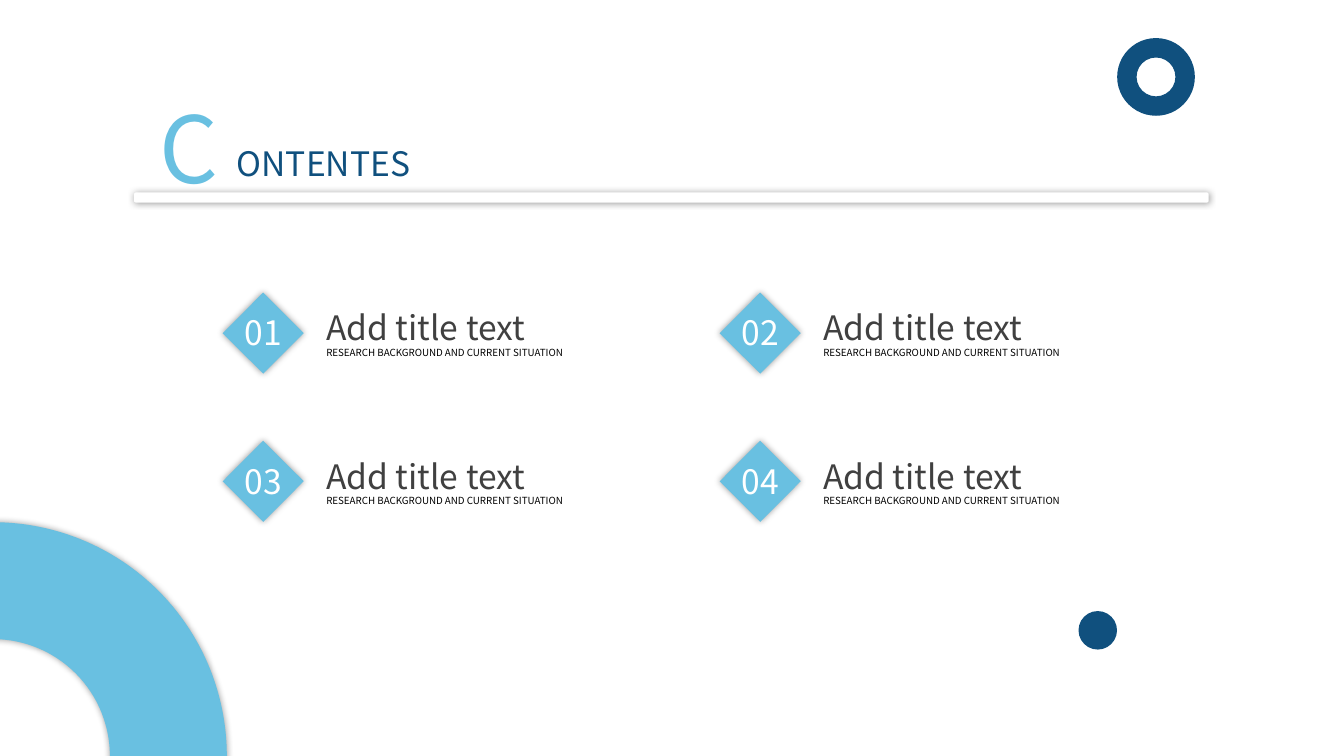
from dataclasses import dataclass

from lxml import etree
from pptx import Presentation
from pptx.dml.color import RGBColor
from pptx.enum.shapes import MSO_SHAPE
from pptx.enum.text import MSO_AUTO_SIZE, PP_ALIGN
from pptx.oxml.ns import qn
from pptx.util import Pt

RECT, ROUND = MSO_SHAPE.RECTANGLE, MSO_SHAPE.ROUNDED_RECTANGLE
RING, DISC = MSO_SHAPE.DONUT, MSO_SHAPE.OVAL
LEFT, MID, FULL = PP_ALIGN.LEFT, PP_ALIGN.CENTER, PP_ALIGN.JUSTIFY
GROW = MSO_AUTO_SIZE.SHAPE_TO_FIT_TEXT


@dataclass(frozen=True)
class Theme:
    font: str = "Noto Sans CJK SC"
    navy: str = "10507E"
    sky: str = "69C0E1"
    white: str = "FFFFFF"
    gray: str = "404040"
    black: str = "000000"
    huge: int = 66
    head: int = 24
    note: int = 7


THEME = Theme()


def add_shade(shape):
    """Give the shape a soft shadow on all sides."""
    effects = shape._element.spPr.find(qn("a:effectLst"))
    shade = etree.SubElement(effects, qn("a:outerShdw"), blurRad=str(Pt(5)),
                             dist="0", dir="0", algn="ctr", rotWithShape="0")
    color = etree.SubElement(shade, qn("a:srgbClr"), val=THEME.black)
    etree.SubElement(color, qn("a:alpha"), val="40000")


def add_form(parent, kind, box, color, shade=False, turn=0):
    shape = parent.shapes.add_shape(kind, *map(Pt, box))
    shape.shadow.inherit = False
    shape.fill.solid()
    shape.fill.fore_color.rgb = RGBColor.from_string(color)
    shape.line.fill.background()
    shape.rotation = turn
    if shade:
        add_shade(shape)


def add_text(parent, text, box, size=THEME.head, color=THEME.black, align=FULL):
    frame = parent.shapes.add_textbox(*map(Pt, box)).text_frame
    frame.word_wrap = True
    frame.auto_size = GROW
    para = frame.paragraphs[0]
    para.alignment = align
    run = para.add_run()
    run.text = text
    font = run.font
    font.name, font.size = THEME.font, Pt(size)
    font.color.rgb = RGBColor.from_string(color)
    etree.SubElement(run._r.get_or_add_rPr(), qn("a:ea"), typeface=THEME.font)


def add_head(slide, left, top, width):
    """Place the large initial, the rest of the word and the bar below."""
    group = slide.shapes.add_group_shape()
    add_text(group, "C", (left + 10.8, top, 55.4, 87.1),
             size=THEME.huge, color=THEME.sky, align=LEFT)
    add_text(group, "ONTENTES", (left + 66.2, top + 37.4, 153.4, 36),
             color=THEME.navy)
    add_form(slide, ROUND, (left, top + 76.3, width, 7.2), THEME.white, shade=True)


def add_item(slide, left, top, number):
    group = slide.shapes.add_group_shape()
    add_form(group, RECT, (left + 5.5, top + 1.5, 41, 41), THEME.sky,
             shade=True, turn=44.9)
    add_text(group, f"{number:02}", (left, top + 3.6, 52, 36),
             color=THEME.white, align=MID)
    add_text(group, "Add title text", (left + 64, top, 205, 36), color=THEME.gray)
    add_text(group, "RESEARCH BACKGROUND AND CURRENT SITUATION",
             (left + 64, top + 28, 227.5, 16), size=THEME.note)


def add_list(slide, left, top, step, drop):
    """Place four items in two columns, numbered along the rows."""
    for col in range(2):
        for row in range(2):
            add_item(slide, left + col * step, top + row * drop, 2 * row + col + 1)


def main():
    deck = Presentation()
    deck.slide_width, deck.slide_height = Pt(960), Pt(540)
    slide = deck.slides.add_slide(deck.slide_layouts[6])
    add_form(slide, RING, (798, 27.2, 55.5, 55.5), THEME.navy)
    add_head(slide, 95.8, 61.2, 767.5)
    add_form(slide, RING, (-172, 373, 334, 334), THEME.sky, shade=True)
    add_list(slide, 162, 216, 355, 105.8)
    add_form(slide, DISC, (770.4, 436.5, 27.5, 27.5), THEME.navy)
    deck.save("out.pptx")


if __name__ == "__main__":
    main()
